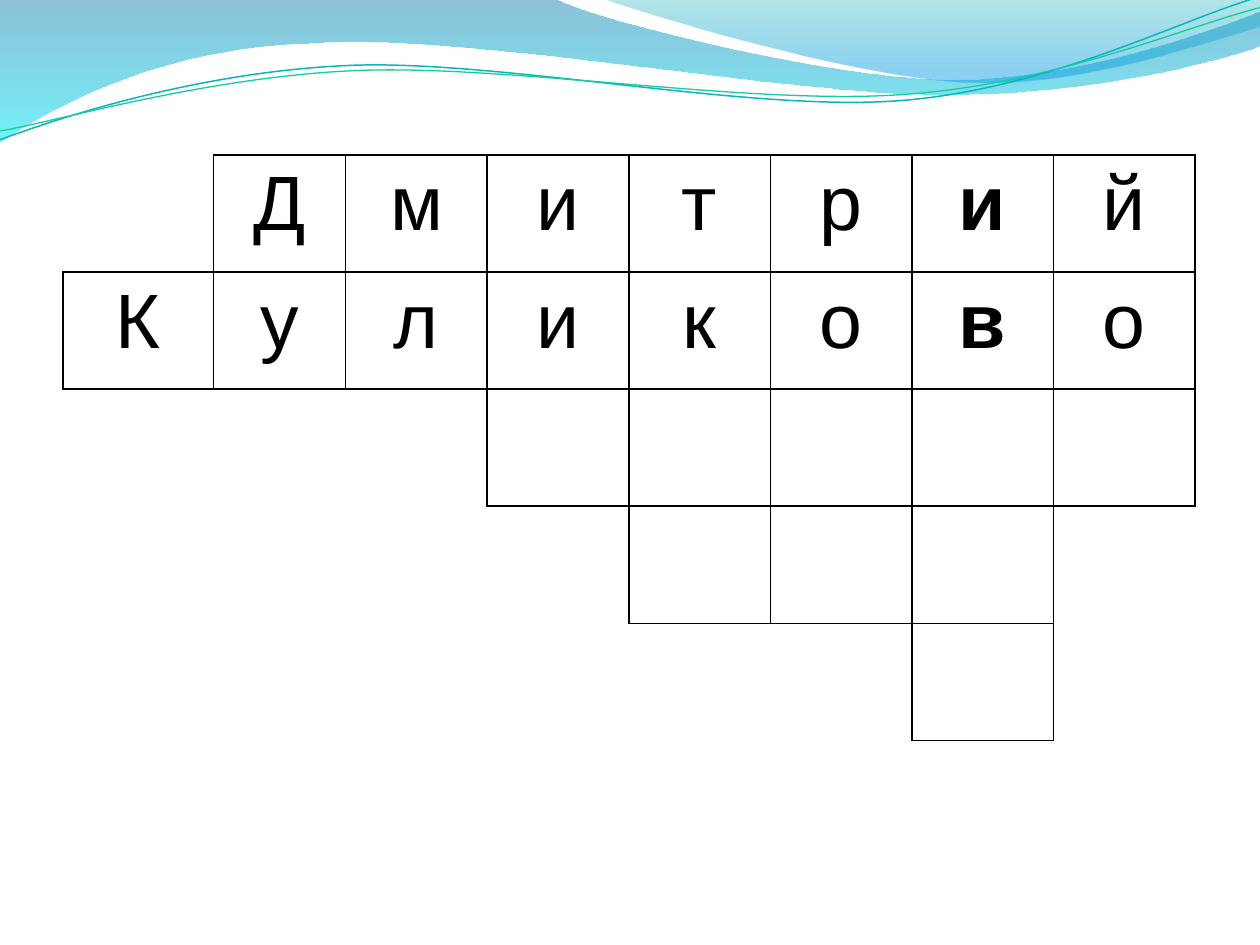
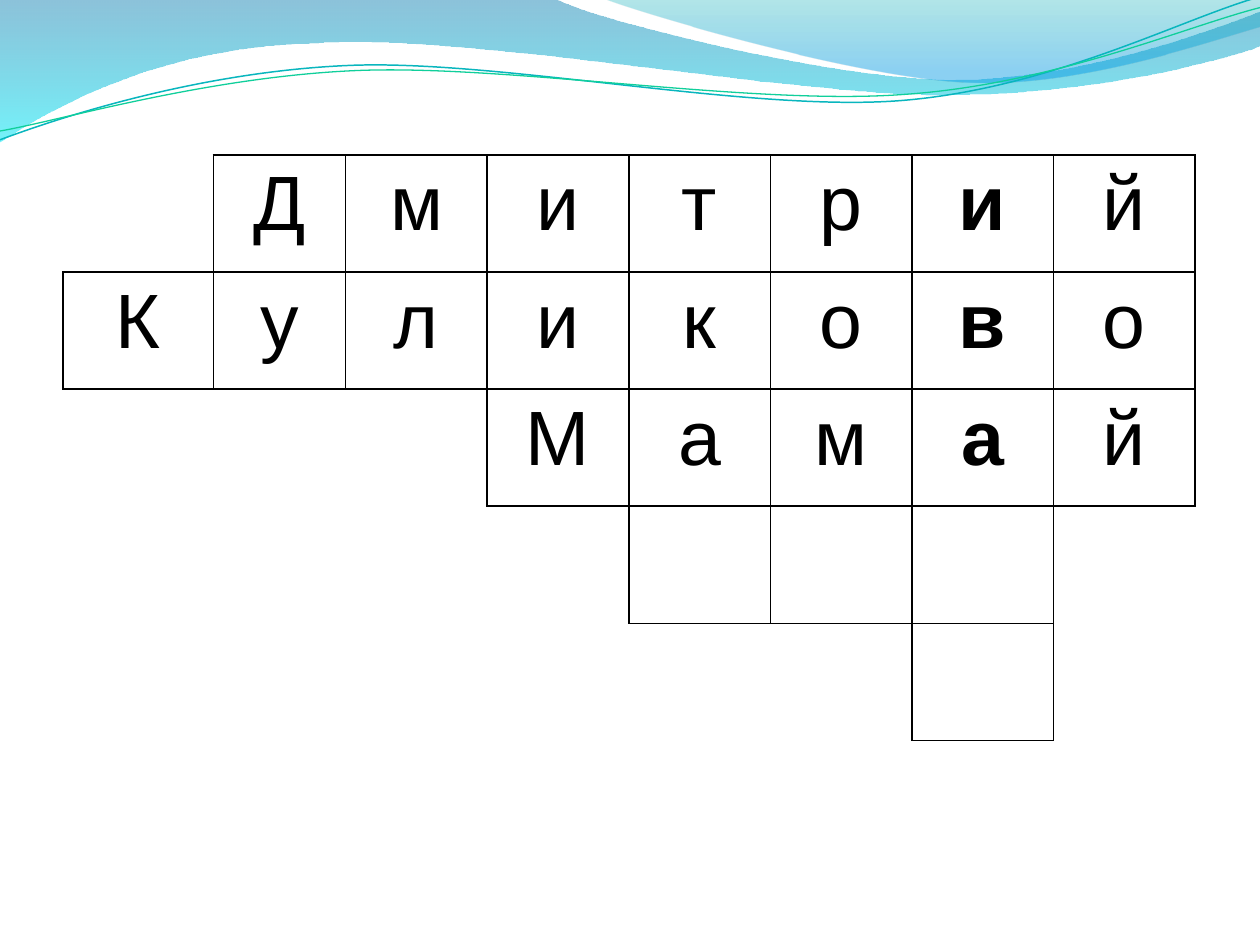
"""Build two crossword slides under a shared band of waves."""

import dataclasses
import math

import lxml.etree
import pptx
import pptx.dml.color
import pptx.enum.text
import pptx.oxml
import pptx.oxml.ns
import pptx.util

SLIDE_WIDTH, SLIDE_HEIGHT = 10, 7.5
FONT = "Arial"
BLACK = "000000"
LINE_ROTATION = 357.3

GRID_LEFT, GRID_TOP, GRID_FRAME = 0.5, 1.23, 3.28
COLUMN_POINTS = (86, 75.6) + (80.9,) * 6
ROW_POINTS = 66.9
KEY_COLUMN = 6

Point = tuple[float, float]


@dataclasses.dataclass(frozen=True)
class Stop:
    position: int
    color: str
    opacity: int


@dataclasses.dataclass(frozen=True)
class Wave:
    frame: tuple[float, float, float, float]
    start: Point
    segments: tuple[tuple[Point, ...], ...]
    stops: tuple[Stop, ...] = ()
    line_color: str = ""
    line_width: float = 0
    rotation: float = 0

    def local(self, point: Point) -> tuple[int, int]:
        left, top, width, height = self.frame
        angle = math.radians(-self.rotation)
        across = point[0] - left - width / 2
        down = point[1] - top - height / 2
        x = across * math.cos(angle) - down * math.sin(angle) + width / 2
        y = across * math.sin(angle) + down * math.cos(angle) + height / 2
        return pptx.util.Inches(x), pptx.util.Inches(y)


@dataclasses.dataclass(frozen=True)
class Entry:
    first_column: int
    word: str
    length: int

    def covers(self, column: int) -> bool:
        return self.first_column <= column < self.first_column + self.length

    def letter(self, column: int) -> str:
        index = column - self.first_column
        return self.word[index:index + 1] if index >= 0 else ""


FILLED_WAVES = (
    Wave((-0.01, -0.01, 10.02, 1.14), (0, 0), (
        ((4.4, -0.01),),
        ((4.76, 0.17), (6.64, 0.63), (7.58, 0.63)),
        ((8.53, 0.63), (9.58, 0.26), (10, 0.09)),
        ((10.01, 0.36),),
        ((9.83, 0.44), (8.7, 0.76), (7.46, 0.75)),
        ((6.22, 0.75), (3.82, 0.28), (2.57, 0.34)),
        ((1.29, 0.36), (0.46, 0.83), (-0.01, 1.13)),
        ((0, 0),),
    ), stops=(Stop(0, "0079AD", 45), Stop(100, "00E9F7", 55))),
    Wave((4.79, -0.01, 5.21, 0.7), (4.79, -0.01), (
        ((5.09, 0.11), (6.82, 0.62), (7.69, 0.65)),
        ((8.56, 0.69), (9.61, 0.32), (10, 0.21)),
        ((10, 0),),
        ((4.79, -0.01),),
    ), stops=(Stop(0, "00ABB4", 30), Stop(80, "0099E4", 45), Stop(100, "0099E4", 45))),
)
LINE_WAVES = (
    Wave((-0.02, 0.22, 10.02, 0.71), (0, 1.11), (
        ((0.48, 0.93), (1.58, 0.57), (2.77, 0.52)),
        ((3.95, 0.47), (5.93, 0.89), (7.13, 0.8)),
        ((8.33, 0.71), (9.38, 0.15), (9.98, -0.02)),
    ), line_color="09B6BE", line_width=0.85, rotation=LINE_ROTATION),
    Wave((-0.02, 0.3, 10.03, 0.58), (0, 1.04), (
        ((0.47, 0.96), (1.64, 0.61), (2.83, 0.56)),
        ((4.03, 0.51), (5.97, 0.84), (7.17, 0.75)),
        ((8.36, 0.67), (9.41, 0.21), (10, 0.06)),
    ), line_color="10CF9B", line_width=0.75, rotation=LINE_ROTATION),
)

FIRST_ENTRIES = (Entry(1, "Дмитрий", 7), Entry(0, "Куликово", 8))
LAST_ENTRIES = (Entry(4, "", 3), Entry(6, "", 1))
CROSSWORDS = tuple(
    FIRST_ENTRIES + (Entry(3, third_word, 5),) + LAST_ENTRIES
    for third_word in ("", "Мамай")
)


def rgb(color: str) -> pptx.dml.color.RGBColor:
    return pptx.dml.color.RGBColor.from_string(color)


def add_element(parent, tag: str, **attributes: str):
    return lxml.etree.SubElement(parent, pptx.oxml.ns.qn(f"a:{tag}"), **attributes)


def write_text(cell, text: str, *, size: float = 44, color: str = BLACK,
               bold: bool = False) -> None:
    paragraph = cell.text_frame.paragraphs[0]
    paragraph.alignment = pptx.enum.text.PP_ALIGN.CENTER
    run = paragraph.add_run()
    run.text = text
    run.font.name = FONT
    run.font.size = pptx.util.Pt(size)
    run.font.bold = bold
    run.font.color.rgb = rgb(color)


def fill_gradient(shape, stops: tuple[Stop, ...]) -> None:
    stop_xml = "".join(
        f'<a:gs pos="{stop.position * 1000}"><a:srgbClr val="{stop.color}">'
        f'<a:alpha val="{stop.opacity * 1000}"/></a:srgbClr></a:gs>'
        for stop in stops
    )
    gradient = pptx.oxml.parse_xml(
        f'<a:gradFill {pptx.oxml.ns.nsdecls("a")}><a:gsLst>{stop_xml}</a:gsLst>'
        '<a:lin ang="5400000" scaled="0"/></a:gradFill>'
    )
    shape.fill.background()
    no_fill = shape._element.spPr.find(pptx.oxml.ns.qn("a:noFill"))
    no_fill.getparent().replace(no_fill, gradient)


def curve_outline(shape, wave: Wave) -> None:
    outline = next(shape._element.iter(pptx.oxml.ns.qn("a:path")))
    for child in list(outline):
        outline.remove(child)
    outline.set("w", str(shape.width))
    outline.set("h", str(shape.height))
    for points in ((wave.start,), *wave.segments):
        tag = "cubicBezTo" if len(points) == 3 else "lnTo"
        step = add_element(outline, tag if len(outline) else "moveTo")
        for point in points:
            x, y = wave.local(point)
            add_element(step, "pt", x=str(x), y=str(y))
    if wave.stops:
        add_element(outline, "close")


def draw_wave(slide, wave: Wave):
    builder = slide.shapes.build_freeform(*wave.local(wave.start), scale=1.0)
    builder.add_line_segments(
        [wave.local(segment[-1]) for segment in wave.segments], close=False)
    shape = builder.convert_to_shape()
    shape.left, shape.top, shape.width, shape.height = map(pptx.util.Inches, wave.frame)
    curve_outline(shape, wave)
    shape.rotation = wave.rotation
    shape.shadow.inherit = False
    if wave.stops:
        fill_gradient(shape, wave.stops)
        shape.line.fill.background()
    else:
        shape.fill.background()
        shape.line.color.rgb = rgb(wave.line_color)
        shape.line.width = pptx.util.Pt(wave.line_width)
    return shape


def draw_master_waves(slide, master) -> None:
    parts = [draw_wave(slide, wave) for wave in FILLED_WAVES]
    lines = [draw_wave(slide, wave) for wave in LINE_WAVES]
    parts.append(slide.shapes.add_group_shape(lines))
    for part in parts:
        master.shapes._spTree.append(part._element)


def set_border(cell, side: str, visible: bool) -> None:
    properties = cell._tc.get_or_add_tcPr()
    line = add_element(properties, f"ln{side}", w=str(pptx.util.Pt(1)))
    fill = add_element(line, "solidFill" if visible else "noFill")
    if visible:
        add_element(fill, "srgbClr", val=BLACK)


def draw_crossword(slide, entries: tuple[Entry, ...]) -> None:
    frame_size = pptx.util.Inches(GRID_FRAME)
    frame = slide.shapes.add_table(
        len(entries), len(COLUMN_POINTS),
        pptx.util.Inches(GRID_LEFT), pptx.util.Inches(GRID_TOP),
        frame_size, frame_size,
    )
    table = frame.table
    table.first_row = table.horz_banding = False
    for column, width in zip(table.columns, COLUMN_POINTS):
        column.width = pptx.util.Pt(width)
    for row in table.rows:
        row.height = pptx.util.Pt(ROW_POINTS)
    frame.width = frame.height = frame_size

    def is_square(row: int, column: int) -> bool:
        return 0 <= row < len(entries) and entries[row].covers(column)

    for row, entry in enumerate(entries):
        for column in range(len(COLUMN_POINTS)):
            cell = table.cell(row, column)
            neighbours = {"L": (row, column - 1), "R": (row, column + 1),
                          "T": (row - 1, column), "B": (row + 1, column)}
            for side, neighbour in neighbours.items():
                set_border(cell, side, is_square(row, column) or is_square(*neighbour))
            cell.fill.background()
            if letter := entry.letter(column):
                write_text(cell, letter, bold=column == KEY_COLUMN)


def main() -> None:
    presentation = pptx.Presentation()
    presentation.slide_width = pptx.util.Inches(SLIDE_WIDTH)
    presentation.slide_height = pptx.util.Inches(SLIDE_HEIGHT)
    layout = presentation.slide_layouts.get_by_name("Blank")
    slides = [presentation.slides.add_slide(layout) for _ in CROSSWORDS]
    draw_master_waves(slides[0], presentation.slide_master)
    for slide, entries in zip(slides, CROSSWORDS):
        draw_crossword(slide, entries)
    presentation.save("out.pptx")


if __name__ == "__main__":
    main()
